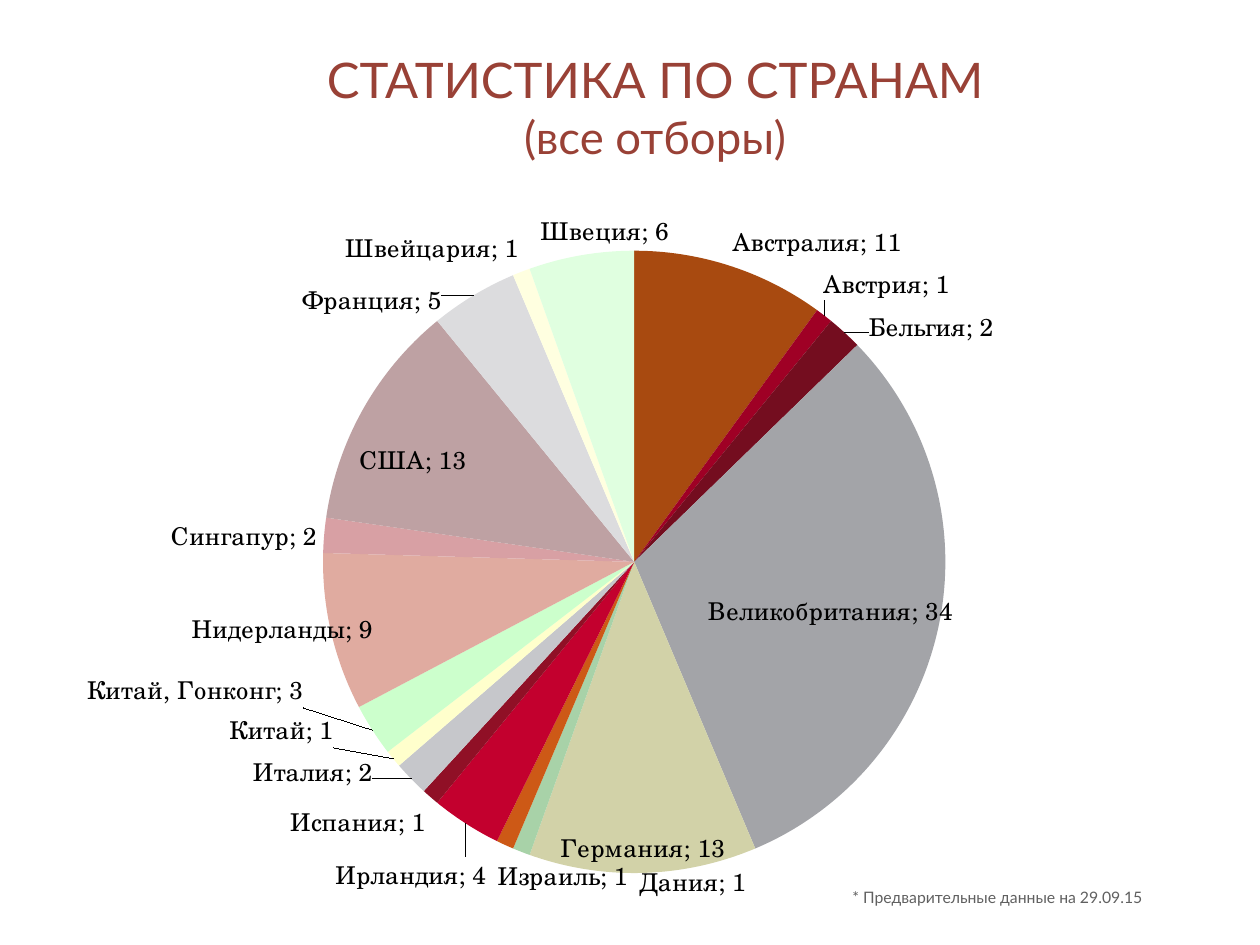
from lxml import etree
from pptx import Presentation
from pptx import util as u
from pptx.chart import data as chart_data
from pptx.dml import color
from pptx.enum import chart as ch, text as tx
from pptx.oxml import ns

Pt = u.Pt
COLORS = {"title": "994136", "note": "606060", "label": "000000", "paper": "FFFFFF"}
COUNTRIES = [
    ("Австралия", 11, "A84A10"), ("Австрия", 1, "9F0025"), ("Бельгия", 2, "740D1F"),
    ("Великобритания", 34, "A3A4A8"), ("Германия", 13, "D2D2A8"), ("Дания", 1, "A8D2A8"),
    ("Израиль", 1, "CD5916"), ("Ирландия", 4, "C3002E"), ("Испания", 1, "901026"),
    ("Италия", 2, "C6C7CB"), ("Китай", 1, "FFFFCC"), ("Китай, Гонконг", 3, "CCFFCC"),
    ("Нидерланды", 9, "E0ABA0"), ("Сингапур", 2, "D8A0A4"), ("США", 13, "BEA1A3"),
    ("Франция", 5, "DCDCDE"), ("Швейцария", 1, "FFFFE0"), ("Швеция", 6, "E0FFE0"),
]
LABEL_SHIFTS = {
    "Австрия": (-3, -5), "Бельгия": (11, 10), "Великобритания": (25, 10),
    "Дания": (130, 2), "Израиль": (72, 3), "Ирландия": (14, 15),
    "Италия": (-19, -18), "Китай": (-31, -30), "Китай, Гонконг": (-36, -36),
    "Нидерланды": (28, -14), "США": (-6, 16), "Франция": (-16, 16), "Швеция": (51, 0),
}
INSIDE = {"Великобритания": ch.XL_LABEL_POSITION.CENTER,
          "Германия": ch.XL_LABEL_POSITION.INSIDE_END,
          "США": ch.XL_LABEL_POSITION.INSIDE_END}


def rgb(name):
    return color.RGBColor.from_string(COLORS.get(name, name))


def manual_layout(**values):
    layout = etree.Element(ns.qn("c:layout"))
    manual = etree.SubElement(layout, ns.qn("c:manualLayout"))
    for tag, value in values.items():
        etree.SubElement(manual, ns.qn("c:" + tag)).set("val", str(value))
    return layout


class SlideBuilder:
    body_font = "Lato"
    label_font = "TeX Gyre Schola"

    def __init__(self, slide):
        self.slide = slide
        slide.background.fill.solid()
        slide.background.fill.fore_color.rgb = rgb("paper")

    def style(self, font, name, size, hue):
        font.name, font.size, font.bold = name, Pt(size), False
        font.color.rgb = rgb(hue)

    def set_lines(self, shape, lines, sizes, hue, anchor):
        frame = shape.text_frame
        frame.word_wrap = True
        frame.auto_size = tx.MSO_AUTO_SIZE.NONE
        frame.vertical_anchor = anchor
        frame.text = "\n".join(lines)
        for paragraph, size in zip(frame.paragraphs, sizes):
            paragraph.alignment = tx.PP_ALIGN.CENTER
            paragraph.line_spacing = 1.0
            paragraph.space_before = Pt(0)
            for run in paragraph.runs:
                self.style(run.font, self.body_font, size, hue)

    def title(self, box, lines, sizes):
        heading = self.slide.shapes.title
        heading.left, heading.top, heading.width, heading.height = map(Pt, box)
        self.set_lines(heading, lines, sizes, "title", tx.MSO_ANCHOR.MIDDLE)

    def note(self, box, line):
        footnote = self.slide.shapes.add_textbox(*map(Pt, box))
        self.set_lines(footnote, [line], [9], "note", tx.MSO_ANCHOR.TOP)

    def label(self, point, country, width, height):
        label = point.data_label
        self.style(label.font, self.label_font, 14, "label")
        label.position = INSIDE.get(country, ch.XL_LABEL_POSITION.OUTSIDE_END)
        node = label._dLbl
        node.find(ns.qn("c:showCatName")).set("val", "1")
        etree.SubElement(node, ns.qn("c:separator")).text = "; "
        if country in LABEL_SHIFTS:
            dx, dy = LABEL_SHIFTS[country]
            node.insert(1, manual_layout(x=round(dx / width, 4), y=round(dy / height, 4)))

    def pie(self, box, countries, plot):
        numbers = chart_data.CategoryChartData(number_format="General")
        numbers.categories = [country for country, _, _ in countries]
        numbers.add_series("Series 1", [count for _, count, _ in countries])
        chart = self.slide.shapes.add_chart(
            ch.XL_CHART_TYPE.PIE, *map(Pt, box), numbers).chart
        chart.has_legend = False
        chart.has_title = False
        self.style(chart.font, "Arial", 10, "label")
        area = chart._chartSpace.chart.plotArea
        for old in area.findall(ns.qn("c:layout")):
            area.remove(old)
        area.insert(0, manual_layout(layoutTarget="inner", xMode="edge", yMode="edge", **plot))
        pie = chart.plots[0]
        pie.vary_by_categories = True
        series = pie.series[0]
        labels = series.data_labels
        labels.show_value = labels.show_category_name = True
        self.style(labels.font, self.label_font, 14, "label")
        for index, (country, _, hue) in enumerate(countries):
            point = series.points[index]
            point.format.fill.solid()
            point.format.fill.fore_color.rgb = rgb(hue)
            point.format.line.fill.background()
            self.label(point, country, box[2], box[3])


def main():
    deck = Presentation()
    deck.slide_width, deck.slide_height = Pt(720), Pt(540)
    builder = SlideBuilder(deck.slides.add_slide(deck.slide_layouts[5]))
    builder.title((95.76, 38.88, 557.28, 43.92),
                  ["СТАТИСТИКА ПО СТРАНАМ", "(все отборы)"], [28, 26])
    builder.pie((30.24, 108, 671.04, 426.24), COUNTRIES,
                {"x": 0.23, "y": 0.08, "w": 0.53, "h": 0.84})
    builder.note((455.76, 504, 228.24, 19.44), "* Предварительные данные на 29.09.15")
    deck.save("out.pptx")


if __name__ == "__main__":
    main()
